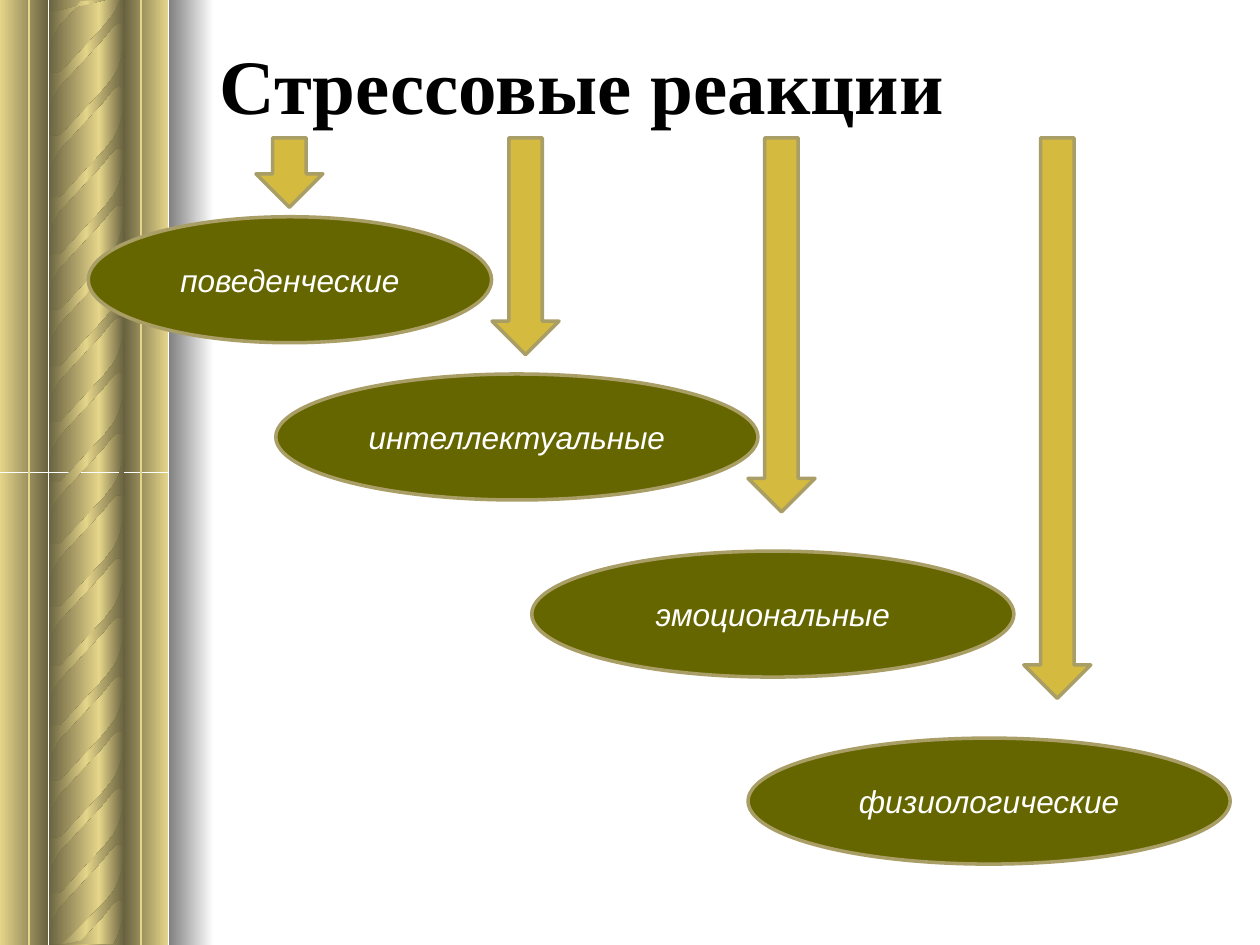
from copy import deepcopy

from pptx import Presentation
from pptx.dml.color import RGBColor
from pptx.enum.shapes import MSO_CONNECTOR, MSO_SHAPE
from pptx.enum.text import MSO_ANCHOR, MSO_AUTO_SIZE, PP_ALIGN
from pptx.oxml.ns import qn
from pptx.oxml.xmlchemy import OxmlElement
from pptx.util import Cm, Pt

RECT, OVAL, ARROW = MSO_SHAPE.RECTANGLE, MSO_SHAPE.OVAL, MSO_SHAPE.DOWN_ARROW
STRAIGHT = MSO_CONNECTOR.STRAIGHT
LEFT, CENTER = PP_ALIGN.LEFT, PP_ALIGN.CENTER
MIDDLE, NO_FIT = MSO_ANCHOR.MIDDLE, MSO_AUTO_SIZE.NONE
TITLE_ONLY = 5

WIDTH, HEIGHT = 25.4, 19.05
COLORS = {
    "gold": "E5D58A", "bronze": "696240", "shade": "808080", "white": "FFFFFF",
    "black": "000000", "arrow": "D4BA3F", "olive": "666600", "outline": "A99E66",
}

# Rope strand: x on the slide, y from the top of the strand
STRAND = [
    (2.5, 0.23), (2.5, 0.84), (2.46, 0.81), (2.36, 0.81), (2.31, 0.84),
    (2.24, 0.91), (2.06, 1.14), (1.63, 1.6), (1.19, 2.08), (1.12, 2.21),
    (1.04, 2.36), (1.02, 2.57), (0.98, 2.84), (0.98, 1.6), (0.98, 1.73),
    (1.02, 1.78), (1.07, 1.8), (1.12, 1.8), (1.17, 1.8), (1.24, 1.78),
    (2.11, 0.84), (2.29, 0.61), (2.36, 0.48), (2.41, 0.36), (2.46, 0.15),
    (2.5, 0), (2.5, 0.51),
]
STRAND_TOPS = [-1.57, -0.33, 0.94, 2.18, 3.33, 4.45, 5.59, 6.71, 7.92, 9.17,
               10.44, 11.63, 12.83, 13.94, 15.09, 16.21, 17.35, 18.42]

# Column bands: left, width, colours from left to right
BANDS = [
    (2, 0.5, ("gold", "bronze")),
    (0, 0.97, ("gold", "bronze")),
    (0.98, 1.02, ("bronze", "gold")),
    (2.5, 0.89, ("bronze", "gold")),
]

# Reactions: text, oval left, top and width, arrow left and height
REACTIONS = [
    ("поведенческие", 1.78, 4.37, 8.13, 5.16, 1.4),
    ("интеллектуальные", 5.56, 7.54, 9.72, 9.92, 4.37),
    ("эмоциональные", 10.72, 11.11, 9.72, 15.08, 7.54),
    ("физиологические", 15.08, 14.88, 9.72, 20.64, 11.3),
]


def rgb(name):
    return RGBColor.from_string(COLORS[name])


class SlideBuilder:
    def __init__(self, slide):
        self.slide = slide
        self.shapes = slide.shapes

    def font(self, p, name, size, color, align):
        p.alignment = align
        p.font.name, p.font.size = name, Pt(size)
        p.font.color.rgb = rgb(color)

    def gradient(self, sp, colors):
        sp.shadow.inherit = False
        sp.line.fill.background()
        sp.fill.gradient()
        sp.fill.gradient_angle = 0
        stops = sp._element.spPr.find(qn("a:gradFill")).find(qn("a:gsLst"))
        while len(stops) < len(colors):
            stops.append(deepcopy(stops[0]))
        for i, (stop, color) in enumerate(zip(sp.fill.gradient_stops, colors)):
            stop.position = i / (len(colors) - 1)
            stop.color.rgb = rgb(color)

    def band(self, left, top, width, height, colors):
        sp = self.shapes.add_shape(RECT, Cm(left), Cm(top), Cm(width), Cm(height))
        self.gradient(sp, colors)

    def strand(self, top):
        # Keep the strand within the slide
        points = [(Cm(x), Cm(min(max(top + y, 0), HEIGHT))) for x, y in STRAND]
        builder = self.shapes.build_freeform(*points[0])
        builder.add_line_segments(points[1:], close=True)
        self.gradient(builder.convert_to_shape(), ("bronze", "gold", "bronze"))

    def groove(self, x):
        line = self.shapes.add_connector(STRAIGHT, Cm(x), 0, Cm(x), Cm(HEIGHT))
        line.line.color.rgb = rgb("gold")
        line.line.width = Pt(1)
        line._element.spPr.append(OxmlElement("a:effectLst"))

    def title(self, text, left, top, width, height):
        sp = self.shapes.title
        sp.left, sp.top, sp.width, sp.height = map(Cm, (left, top, width, height))
        tf = sp.text_frame
        tf.text = text
        tf.auto_size, tf.vertical_anchor = NO_FIT, MIDDLE
        p = tf.paragraphs[0]
        self.font(p, "Times New Roman", 44, "black", LEFT)
        p.font.bold = True

    def outlined(self, kind, left, top, width, height, color):
        sp = self.shapes.add_shape(kind, Cm(left), Cm(top), Cm(width), Cm(height))
        sp.shadow.inherit = False
        sp.fill.solid()
        sp.fill.fore_color.rgb = rgb(color)
        sp.line.color.rgb = rgb("outline")
        sp.line.width = Pt(2)
        return sp

    def arrow(self, left, height):
        self.outlined(ARROW, left, 2.78, 1.35, height, "arrow")

    def oval(self, text, left, top, width):
        tf = self.outlined(OVAL, left, top, width, 2.54, "olive").text_frame
        tf.text = text
        tf.vertical_anchor = MIDDLE
        p = tf.paragraphs[0]
        self.font(p, "Arial", 18, "white", CENTER)
        p.font.italic = True


def main():
    prs = Presentation()
    prs.slide_width, prs.slide_height = Cm(WIDTH), Cm(HEIGHT)
    s = SlideBuilder(prs.slides.add_slide(prs.slide_layouts[TITLE_ONLY]))

    # Column with rope on the left: two halves of bands, then strands
    half = HEIGHT / 2
    for top in (0, half):
        for left, width, colors in BANDS:
            s.band(left, top, width, half, colors)
    for top in STRAND_TOPS:
        s.strand(top)
    s.band(3.4, 0, 0.91, HEIGHT, ("shade", "white"))
    for x in (0.58, 2.84):
        s.groove(x)

    # Title
    s.title("Стрессовые реакции", 4.17, 0, 20.8, 3.38)

    # Arrows and the reactions they point to
    for *_, left, height in REACTIONS:
        s.arrow(left, height)
    for text, left, top, width, *_ in REACTIONS:
        s.oval(text, left, top, width)

    prs.save("out.pptx")


if __name__ == "__main__":
    main()
